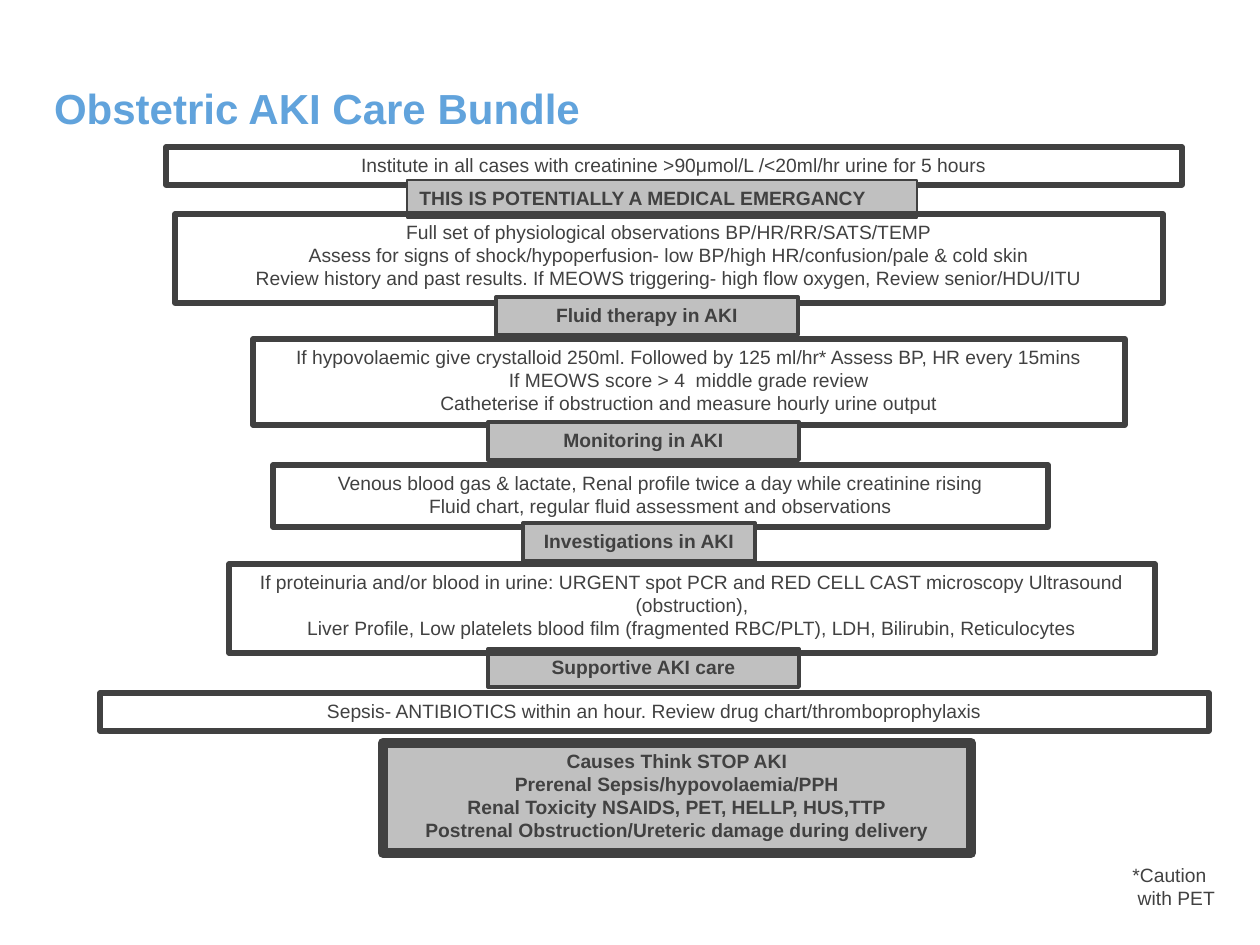
"""Build the obstetric AKI care bundle slide."""
from pptx import Presentation
from pptx import util as u
from pptx.dml.color import RGBColor
from pptx.enum import text

PX = u.Inches(1) / 126
COLOURS = {"title": "61A3DC", "ink": "414141", "heading": "C0C0C0"}
LEFT, CENTER = text.PP_ALIGN.LEFT, text.PP_ALIGN.CENTER


def px(*lengths):
    return [u.Emu(round(length * PX)) for length in lengths]


def write(frame, lines, size=11, colour="ink", bold=False, align=CENTER):
    for index, line in enumerate(lines):
        paragraph = frame.paragraphs[0] if index == 0 else frame.add_paragraph()
        paragraph.alignment = align
        run = paragraph.add_run()
        run.text = line
        run.font.name = "Arial"
        run.font.size = u.Pt(size)
        run.font.bold = bold
        run.font.color.rgb = RGBColor.from_string(COLOURS[colour])


prs = Presentation()
prs.slide_width, prs.slide_height = px(1260, 945)
slide = prs.slides.add_slide(prs.slide_layouts[5])

title = slide.shapes.title
title.left, title.top, title.width, title.height = px(54, 47, 1042, 86)
heading = title.text_frame
heading.margin_left = heading.margin_top = heading.margin_right = heading.margin_bottom = 0
heading.vertical_anchor = text.MSO_ANCHOR.BOTTOM
write(heading, ["Obstetric AKI Care Bundle"], size=24, colour="title", bold=True, align=LEFT)

steps = [
    ((166, 147, 1016, 38), 3, False, True, CENTER,
     ["Institute in all cases with creatinine >90μmol/L /<20ml/hr urine for 5 hours"]),
    ((407, 180, 510, 38), 0.75, True, False, LEFT,
     ["THIS IS POTENTIALLY A MEDICAL EMERGANCY"]),
    ((175, 214, 988, 89), 3, False, True, CENTER,
     ["Full set of physiological observations BP/HR/RR/SATS/TEMP",
      "Assess for signs of shock/hypoperfusion- low BP/high HR/confusion/pale & cold skin",
      "Review history and past results. If MEOWS triggering- high flow oxygen, Review senior/HDU/ITU"]),
    ((496, 297, 302, 38), 2.25, True, True, CENTER, ["Fluid therapy in AKI"]),
    ((253, 339, 872, 86), 3, False, False, CENTER,
     ["If hypovolaemic give crystalloid 250ml. Followed by 125 ml/hr* Assess BP, HR every 15mins",
      "If MEOWS score > 4  middle grade review",
      "Catheterise if obstruction and measure hourly urine output"]),
    ((488, 422, 311, 38), 2.25, True, True, CENTER, ["Monitoring in AKI"]),
    ((273, 465, 775, 62), 3, False, True, CENTER,
     ["Venous blood gas & lactate, Renal profile twice a day while creatinine rising",
      "Fluid chart, regular fluid assessment and observations"]),
    ((488, 649, 311, 38), 2.25, True, True, CENTER, ["Supportive AKI care"]),
    ((229, 564, 926, 89), 3, False, True, CENTER,
     ["If proteinuria and/or blood in urine: URGENT spot PCR and RED CELL CAST microscopy Ultrasound (obstruction),",
      "Liver Profile, Low platelets blood film (fragmented RBC/PLT), LDH, Bilirubin, Reticulocytes"]),
    ((523, 523, 232, 38), 2.25, True, False, CENTER, ["Investigations in AKI"]),
    ((100, 693, 1109, 38), 3, False, True, CENTER,
     ["Sepsis- ANTIBIOTICS within an hour. Review drug chart/thromboprophylaxis"]),
    ((383, 743, 588, 110), 6, True, False, CENTER,
     ["Causes Think STOP AKI",
      "Prerenal Sepsis/hypovolaemia/PPH",
      "Renal Toxicity NSAIDS, PET, HELLP, HUS,TTP",
      "Postrenal Obstruction/Ureteric damage during delivery"]),
    ((1120, 857, 116, 62), 0, False, False, LEFT, ["*Caution", " with PET"]),
]

bundle = slide.shapes.add_group_shape()
for place, border, is_heading, wraps, align, lines in steps:
    step = bundle.shapes.add_textbox(*px(*place))
    if is_heading:
        step.fill.solid()
        step.fill.fore_color.rgb = RGBColor.from_string(COLOURS["heading"])
    if border:
        step.line.width = u.Pt(border)
        step.line.color.rgb = RGBColor.from_string(COLOURS["ink"])
    step.text_frame.word_wrap = wraps
    step.text_frame.auto_size = text.MSO_AUTO_SIZE.SHAPE_TO_FIT_TEXT
    write(step.text_frame, lines, bold=is_heading, align=align)

prs.save("out.pptx")
